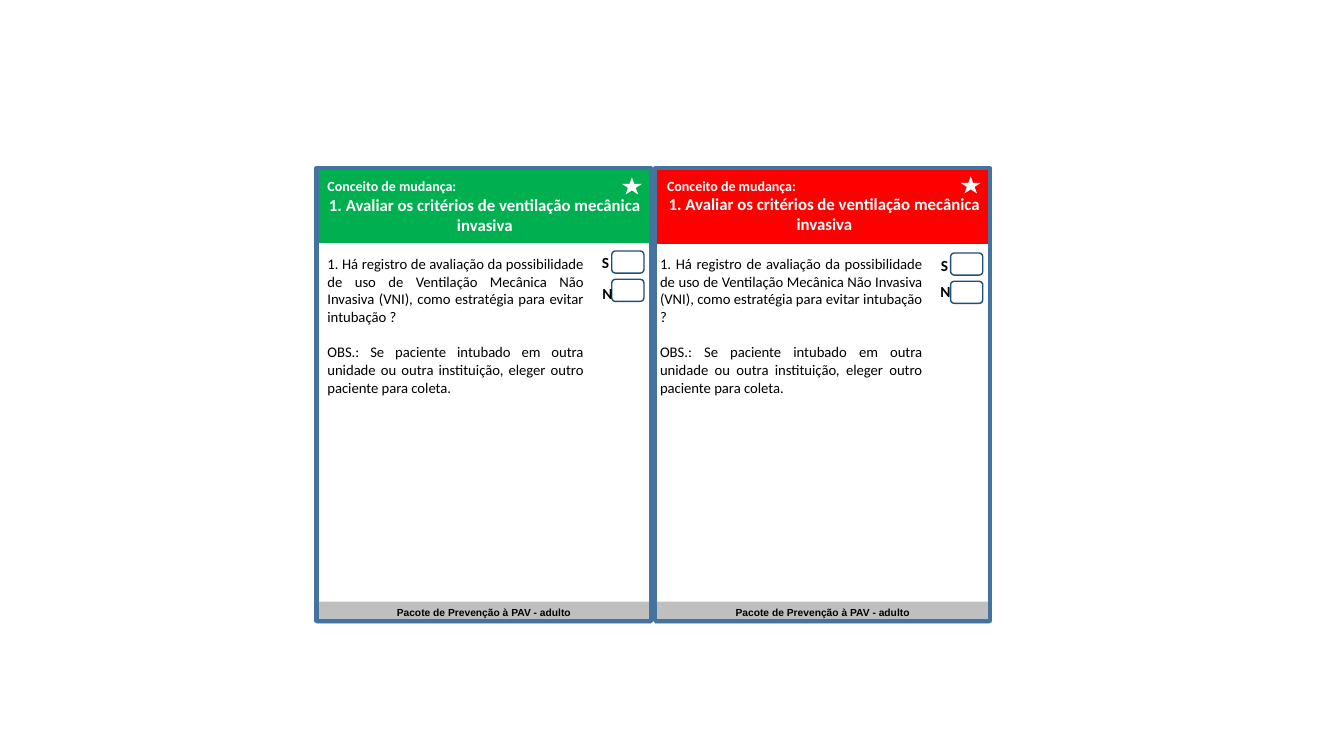
from pptx import Presentation
from pptx.dml.color import RGBColor
from pptx.enum.shapes import MSO_SHAPE
from pptx.enum.text import MSO_ANCHOR, PP_ALIGN
from pptx.util import Pt

GREEN = RGBColor(0x00, 0xB0, 0x50)
RED = RGBColor(0xFF, 0x00, 0x00)
GREY = RGBColor(0xBF, 0xBF, 0xBF)
WHITE = RGBColor(0xFF, 0xFF, 0xFF)
BLACK = RGBColor(0x00, 0x00, 0x00)
FRAME_BLUE = RGBColor(0x43, 0x73, 0x9E)
BOX_BLUE = RGBColor(0x1F, 0x4E, 0x79)

# Content
CONCEPT = "Conceito de mudança:"
TITLE = "1. Avaliar os critérios de ventilação mecânica invasiva"
QUESTION = ("1. Há registro de avaliação da possibilidade de uso de Ventilação Mecânica "
            "Não Invasiva (VNI), como estratégia para evitar intubação ?")
NOTE = ("OBS.: Se paciente intubado em outra unidade ou outra instituição, "
        "eleger outro paciente para coleta.")
FOOTER = "Pacote de Prevenção à PAV - adulto"

# Each area is left, top, width, height; answers are label, label left, label top
CARDS = [
    {"left": 226, "color": GREEN, "header": (226.8, 121, 239, 52.6),
     "body": (226.8, 182, 197.3, 105), "boxes_top": 179.3, "star_top": 126.7,
     "answers": [("S", 424.3, 181.8), ("N", 425.6, 204)]},
    {"left": 468, "color": RED, "header": (469.4, 119.5, 239, 54.7),
     "body": (464.4, 182, 201.6, 105), "boxes_top": 180.7, "star_top": 126,
     "answers": [("S", 666.4, 183.8), ("N", 667, 202.5)]},
]
CARD_WIDTH, CARD_TOP, CARD_HEIGHT = 239, 120.2, 323.3
FOOTER_TOP, FOOTER_HEIGHT = 429.8, 15.8
BOX_OFFSET, BOX_WIDTH, BOX_HEIGHT, BOX_PITCH = 211, 23, 15.8, 20.2
STAR_OFFSET, STAR_WIDTH, STAR_HEIGHT = 218.2, 14.4, 12.2
LABEL_WIDTH, LABEL_HEIGHT = 16.6, 11

presentation = Presentation()
presentation.slide_width, presentation.slide_height = Pt(960), Pt(540)
slide = presentation.slides.add_slide(presentation.slide_layouts[6])


def add_block(kind, area, fill=None, line=None, line_width=1):
    shape = slide.shapes.add_shape(kind, *(Pt(length) for length in area))
    shape.shadow.inherit = False
    if fill is None:
        shape.fill.background()
    else:
        shape.fill.solid()
        shape.fill.fore_color.rgb = fill
    if line is None:
        shape.line.fill.background()
    else:
        shape.line.color.rgb = line
        shape.line.width = Pt(line_width)
    return shape


def add_text_box(area):
    return slide.shapes.add_textbox(*(Pt(length) for length in area))


def write(shape, text, size, color=BLACK, bold=False, font="Calibri",
          align=PP_ALIGN.CENTER, anchor=MSO_ANCHOR.MIDDLE, margin=7.2,
          wrap=True, space_before=0):
    """Add one paragraph, using the empty first one when there is no text yet."""
    frame = shape.text_frame
    frame.word_wrap = wrap
    frame.vertical_anchor = anchor
    frame.margin_left = frame.margin_right = Pt(margin)
    frame.margin_top = frame.margin_bottom = 0
    paragraph = frame.add_paragraph() if frame.text else frame.paragraphs[0]
    paragraph.alignment = align
    paragraph.space_before = Pt(space_before)
    run = paragraph.add_run()
    run.text = text
    run.font.name, run.font.size, run.font.bold = font, Pt(size), bold
    run.font.color.rgb = color


for card in CARDS:
    left = card["left"]

    # Footer and header bands
    footer = add_block(MSO_SHAPE.RECTANGLE, (left, FOOTER_TOP, CARD_WIDTH, FOOTER_HEIGHT), GREY)
    write(footer, FOOTER, 7.3, bold=True, font="Arial")
    header = add_block(MSO_SHAPE.RECTANGLE, card["header"], card["color"])
    write(header, CONCEPT, 10, color=WHITE, bold=True, align=PP_ALIGN.LEFT)
    write(header, TITLE, 12, color=WHITE, bold=True)

    # Question and note
    body = add_text_box(card["body"])
    body_format = {"align": PP_ALIGN.JUSTIFY, "anchor": MSO_ANCHOR.TOP}
    write(body, QUESTION, 10.5, **body_format)
    write(body, NOTE, 10.5, space_before=12.8, **body_format)

    # Answer boxes with their letters
    for row, (letter, label_left, label_top) in enumerate(card["answers"]):
        box_top = card["boxes_top"] + row * BOX_PITCH
        add_block(MSO_SHAPE.ROUNDED_RECTANGLE,
                  (left + BOX_OFFSET, box_top, BOX_WIDTH, BOX_HEIGHT), line=BOX_BLUE)
        label = add_text_box((label_left, label_top, LABEL_WIDTH, LABEL_HEIGHT))
        write(label, letter, 11, bold=True, margin=0, wrap=False)

    # Card frame and star
    add_block(MSO_SHAPE.RECTANGLE, (left, CARD_TOP, CARD_WIDTH, CARD_HEIGHT),
              line=FRAME_BLUE, line_width=3)
    add_block(MSO_SHAPE.STAR_5_POINT,
              (left + STAR_OFFSET, card["star_top"], STAR_WIDTH, STAR_HEIGHT), WHITE)

presentation.save("out.pptx")
